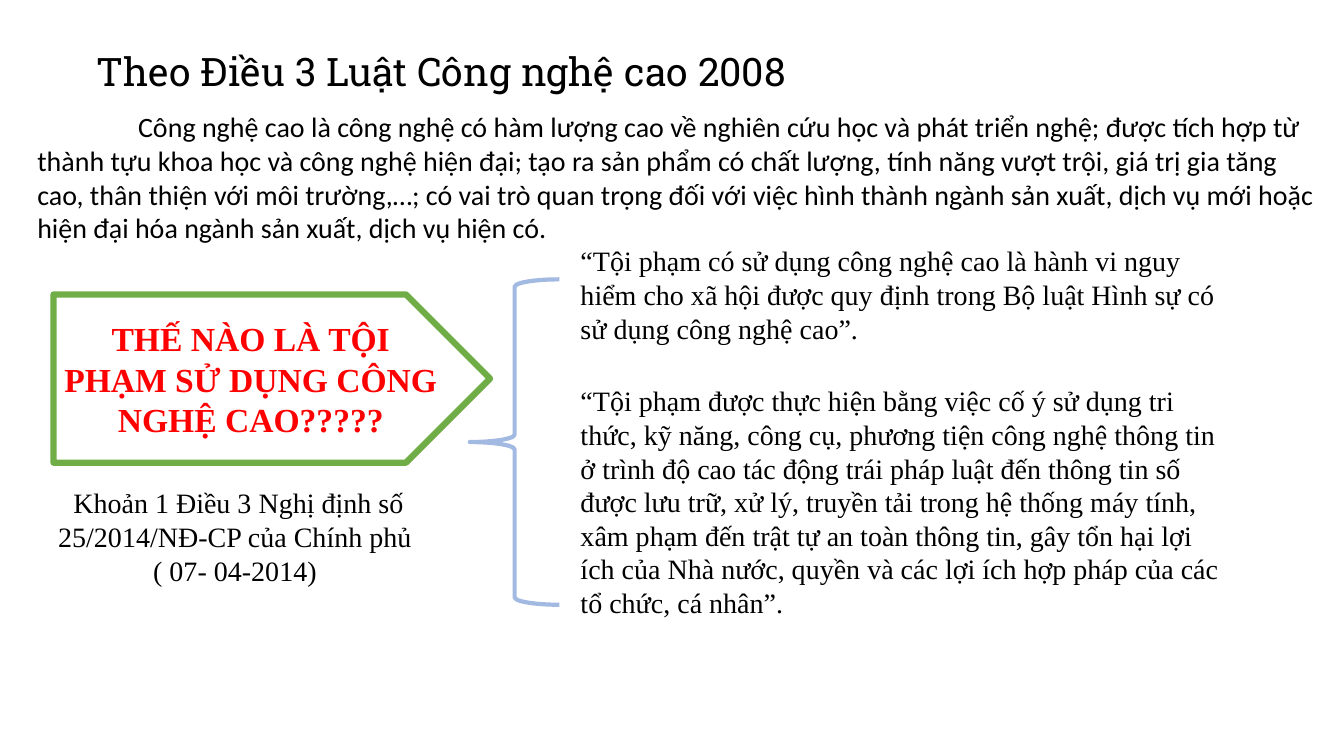
from pptx import Presentation
from pptx.dml.color import RGBColor
from pptx.enum.shapes import MSO_SHAPE
from pptx.enum.text import MSO_ANCHOR, PP_ALIGN
from pptx.util import Cm, Pt

PENTAGON = MSO_SHAPE.PENTAGON
BRACE = MSO_SHAPE.LEFT_BRACE
MIDDLE = MSO_ANCHOR.MIDDLE
LEFT, CENTER = PP_ALIGN.LEFT, PP_ALIGN.CENTER

COLORS = {"text": "000000", "paper": "FFFFFF", "question": "FF0000",
          "arrow": "70AD47", "brace": "A2B9E2"}
HEADING_FONT, BODY_FONT, SERIF = "Roboto Slab", "Calibri", "Times New Roman"


def color(name):
    return RGBColor.from_string(COLORS[name])


def write(paragraph, text, font=SERIF, size=20, ink="text", bold=False,
          align=LEFT, first_line=0):
    """Add one run; first_line is the first-line indent in cm."""
    paragraph.alignment = align
    if first_line:
        paragraph._p.get_or_add_pPr().set("indent", str(Cm(first_line)))
    run = paragraph.add_run()
    run.text = text
    run.font.name = font
    run.font.size = Pt(size)
    run.font.bold = bold
    run.font.color.rgb = color(ink)


def add_text_frame(slide, left, top, width, height):
    frame = slide.shapes.add_textbox(Cm(left), Cm(top), Cm(width), Cm(height)).text_frame
    frame.word_wrap = True
    return frame


def add_outline(slide, kind, left, top, width, height, line, weight):
    outline = slide.shapes.add_shape(kind, Cm(left), Cm(top), Cm(width), Cm(height))
    outline.shadow.inherit = False
    outline.line.color.rgb = color(line)
    outline.line.width = Pt(weight)
    return outline


def add_definition(slide, left, top, width, height):
    frame = add_text_frame(slide, left, top, width, height)
    write(frame.paragraphs[0], "Theo Điều 3 Luật Công nghệ cao 2008",
          HEADING_FONT, 28, first_line=1.5)
    definition = frame.add_paragraph()
    definition.space_before = Pt(11)
    write(definition,
          "Công nghệ cao là công nghệ có hàm lượng cao về nghiên cứu học và phát triển "
          "nghệ; được tích hợp từ thành tựu khoa học và công nghệ hiện đại; tạo ra sản "
          "phẩm có chất lượng, tính năng vượt trội, giá trị gia tăng cao, thân thiện với "
          "môi trường,…; có vai trò quan trọng đối với việc hình thành ngành sản xuất, "
          "dịch vụ mới hoặc hiện đại hóa ngành sản xuất, dịch vụ hiện có.",
          BODY_FONT, first_line=2.54)


def add_question(slide, left, top, width, height):
    # Arrow with the question
    arrow = add_outline(slide, PENTAGON, left + 0.23, top, width - 0.23, 4.24, "arrow", 4.5)
    arrow.fill.solid()
    arrow.fill.fore_color.rgb = color("paper")
    frame = arrow.text_frame
    frame.word_wrap = True
    frame.vertical_anchor = MIDDLE
    write(frame.paragraphs[0], "THẾ NÀO LÀ TỘI PHẠM SỬ DỤNG CÔNG NGHỆ CAO?????",
          size=24, ink="question", bold=True, align=CENTER)

    # Legal source below the arrow
    source = add_text_frame(slide, left, top + 4.7, 9.78, height - 4.7)
    write(source.paragraphs[0],
          "Khoản 1 Điều 3 Nghị định số 25/2014/NĐ-CP của Chính phủ ", align=CENTER)
    write(source.add_paragraph(), "( 07- 04-2014) ", align=CENTER)


def add_answers(slide, left, top, width, height):
    # Brace gathering both answers
    brace = add_outline(slide, BRACE, left, top + 1.02, 2.26, 8.2, "brace", 3)
    brace.fill.background()

    # Quoted answers: offset from the top, height, wording
    answers = (
        (0, 2.82,
         "“Tội phạm có sử dụng công nghệ cao là hành vi nguy hiểm cho xã hội được quy "
         "định trong Bộ luật Hình sự có sử dụng công nghệ cao”."),
        (3.53, height - 3.53,
         "“Tội phạm được thực hiện bằng việc cố ý sử dụng tri thức, kỹ năng, công cụ, "
         "phương tiện công nghệ thông tin ở trình độ cao tác động trái pháp luật đến "
         "thông tin số được lưu trữ, xử lý, truyền tải trong hệ thống máy tính, xâm phạm "
         "đến trật tự an toàn thông tin, gây tổn hại lợi ích của Nhà nước, quyền và các "
         "lợi ích hợp pháp của các tổ chức, cá nhân”."),
    )
    for offset, answer_height, wording in answers:
        answer = add_text_frame(slide, left + 2.54, top + offset, width - 2.54, answer_height)
        write(answer.paragraphs[0], wording)


def main():
    deck = Presentation()
    deck.slide_width, deck.slide_height = Cm(33.87), Cm(19.05)
    slide = deck.slides.add_slide(deck.slide_layouts[6])
    add_definition(slide, 0.69, 1.07, 32.79, 6)
    add_question(slide, 1.12, 7.42, 11.23, 7.52)
    add_answers(slide, 11.84, 6.02, 19.48, 9.78)
    deck.save("out.pptx")


if __name__ == "__main__":
    main()
